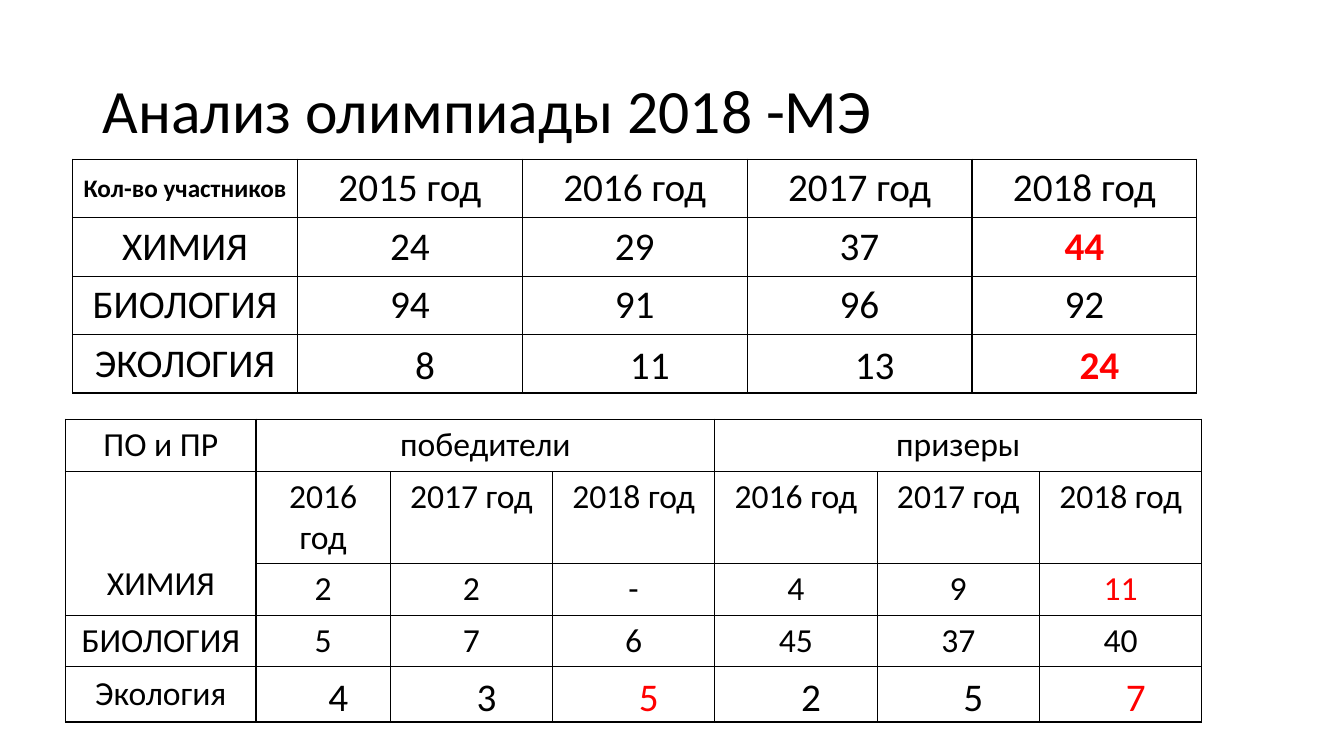
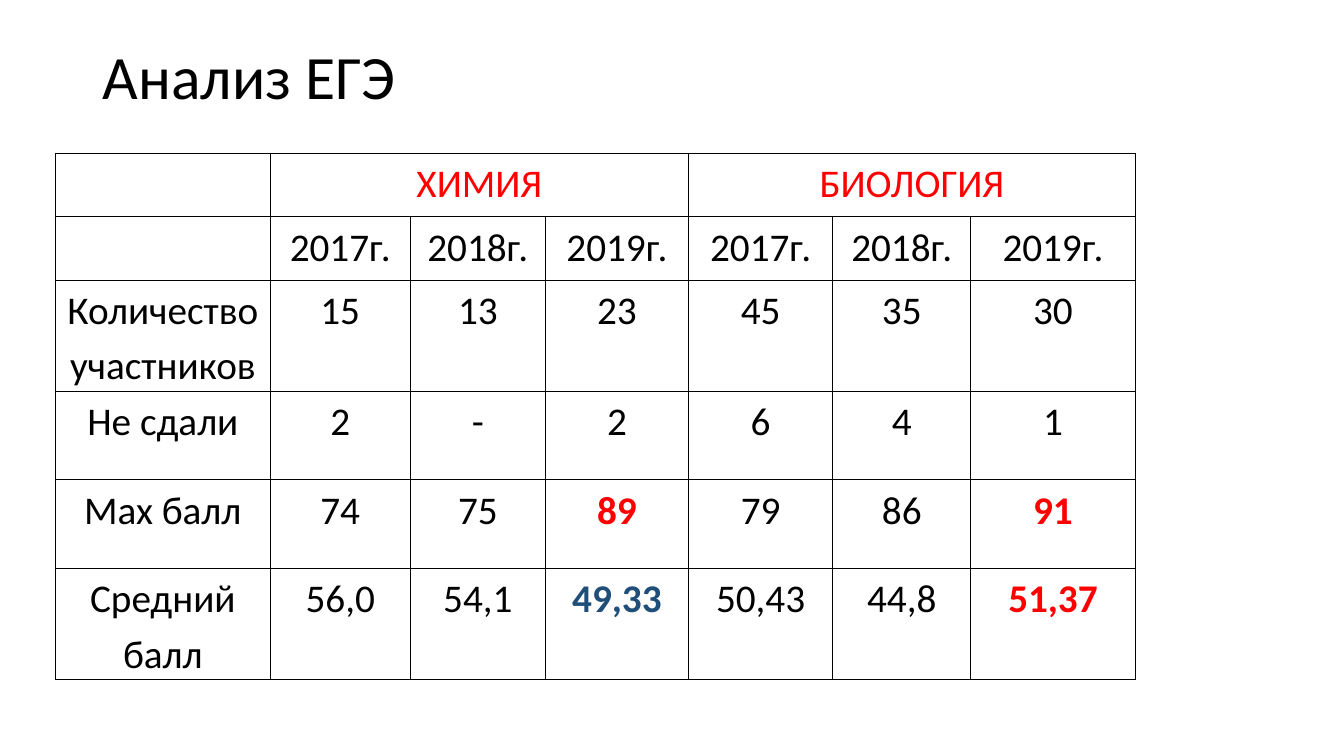
from lxml.etree import SubElement
from pptx import Presentation
from pptx.dml.color import RGBColor
from pptx.enum.text import MSO_ANCHOR, PP_ALIGN
from pptx.oxml.ns import qn
from pptx.util import Inches, Pt

LEFT, CENTER = PP_ALIGN.LEFT, PP_ALIGN.CENTER
TOP, MIDDLE, BOTTOM = MSO_ANCHOR.TOP, MSO_ANCHOR.MIDDLE, MSO_ANCHOR.BOTTOM

BLACK = RGBColor(0x00, 0x00, 0x00)
RED = RGBColor(0xFF, 0x00, 0x00)
BLUE = RGBColor(0x1F, 0x4E, 0x79)

FONT = "Calibri"
SIDES = ("lnL", "lnR", "lnT", "lnB")
TITLE = {"size": 44}
PLAIN = {"size": 28}
SMALL = {"size": 24}
LOOSE = {"margin_left": Inches(0.07), "margin_right": Inches(0.07),
         "margin_top": 0, "margin_bottom": 0}
ALERT = {"color": RED, "bold": True}

TALLY = [
    ["Кол-во участников", "2015 год", "2016 год", "2017 год", "2018 год"],
    ["ХИМИЯ", "24", "29", "37", "44"],
    ["БИОЛОГИЯ", "94", "91", "96", "92"],
    ["ЭКОЛОГИЯ", "8", "11", "13", "24"],
]
YEARS = ["2016 год", "2017 год", "2018 год"]
AWARDS = [
    ["ПО и ПР", "победители", "", "", "призеры", "", ""],
    ["ХИМИЯ", *YEARS * 2],
    ["", "2", "2", "-", "4", "9", "11"],
    ["БИОЛОГИЯ", "5", "7", "6", "45", "37", "40"],
    ["Экология", "4", "3", "5", "2", "5", "7"],
]
EXAM = [
    ["", "ХИМИЯ", "", "", "БИОЛОГИЯ", "", ""],
    ["", *["2017г.", "2018г.", "2019г."] * 2],
    ["Количество участников", "15", "13", "23", "45", "35", "30"],
    ["Не сдали", "2", "-", "2", "6", "4", "1"],
    ["Max балл", "74", "75", "89", "79", "86", "91"],
    ["Средний балл", "56,0", "54,1", "49,33", "50,43", "44,8", "51,37"],
]


def style(para, size, color=BLACK, bold=False, align=CENTER, space=None):
    para.alignment = align
    para.line_spacing = space
    look = {"name": FONT, "size": Pt(size), "bold": bold}
    for run in para.runs:
        for key, value in look.items():
            setattr(run.font, key, value)
        run.font.color.rgb = color


def add_slide(deck, text, height):
    """Add a slide whose title fills a band of the given height."""
    slide = deck.slides.add_slide(deck.slide_layouts[5])
    title = slide.shapes.title
    place = {"left": 0.92, "top": 0.4, "width": 11.5, "height": height}
    for key, value in place.items():
        setattr(title, key, Inches(value))
    title.text_frame.text = text
    title.text_frame.vertical_anchor = MIDDLE
    style(title.text_frame.paragraphs[0], **TITLE, align=LEFT, space=0.9)
    return slide


def add_edges(cell):
    props = cell._tc.get_or_add_tcPr()
    for spot, side in enumerate(SIDES):
        line = SubElement(props, qn(f"a:{side}"), w=str(Pt(1)))
        fill = SubElement(line, qn("a:solidFill"))
        SubElement(fill, qn("a:srgbClr"), val=str(BLACK))
        props.insert(spot, line)


def loosen(cell, indent=0):
    """Give a cell wide line spacing, no upper or lower margin, and an indent."""
    for key, value in LOOSE.items():
        setattr(cell, key, value)
    para = cell.text_frame.paragraphs[0]
    para.line_spacing = 1.15
    if indent:
        para._p.get_or_add_pPr().set("marL", str(Inches(indent)))


def add_grid(slide, at, cols, rows, data, base, marks):
    """Draw a ruled table; marks maps (row, column) to format values."""
    size = sum(cols), sum(rows)
    frame = slide.shapes.add_table(
        len(rows), len(cols), *map(Inches, (*at, *size)))
    grid = frame.table
    grid.first_row = grid.horz_banding = False
    for col, width in zip(grid.columns, cols):
        col.width = Inches(width)
    for row, height in zip(grid.rows, rows):
        row.height = Inches(height)
    for r, line in enumerate(data):
        for c, text in enumerate(line):
            cell = grid.cell(r, c)
            cell.text = text
            cell.fill.background()
            cell.vertical_anchor = TOP if c else MIDDLE
            add_edges(cell)
            style(cell.text_frame.paragraphs[0],
                  **{**base, **marks.get((r, c), {})})
    return grid


def merge(grid, first, last):
    grid.cell(*first).merge(grid.cell(*last))


def merge_heads(grid):
    """Join the two group headings, each over three years."""
    for col in (1, 4):
        merge(grid, (0, col), (0, col + 2))


def add_tally(slide):
    marks = {(0, 0): {"size": 18, "bold": True}, (1, 4): ALERT, (3, 4): ALERT}
    grid = add_grid(slide, (0.72, 1.58), [2.23] * 5, [0.58] * 4,
                    TALLY, PLAIN, marks)
    for col in range(1, 5):
        loosen(grid.cell(3, col), 0.3)


def add_awards(slide):
    marks = {(4, col): PLAIN for col in range(1, 7)}
    marks[2, 6] = {"color": RED}
    for col in (3, 6):
        marks[4, col] = {**PLAIN, "color": RED}
    grid = add_grid(slide, (0.65, 4.16), [1.89, 1.33, *[1.61] * 5],
                    [0.52, 0.91, 0.51, 0.51, 0.55], AWARDS, SMALL, marks)
    merge_heads(grid)
    merge(grid, (1, 0), (2, 0))
    label = grid.cell(1, 0)
    label.vertical_anchor = BOTTOM
    label.margin_bottom = Inches(0.11)
    for col in range(1, 7):
        loosen(grid.cell(4, col), 0.3)


def add_exam(slide):
    marks = {(0, 1): {"color": RED}, (0, 4): {"color": RED},
             (4, 3): ALERT, (4, 6): ALERT, (5, 6): ALERT,
             (5, 3): {"color": BLUE, "bold": True}}
    grid = add_grid(slide, (0.55, 1.52),
                    [2.13, 1.39, 1.34, 1.42, 1.43, 1.37, 1.63],
                    [0.63, 0.63, 1.1, 0.88, 0.88, 1.1], EXAM, PLAIN, marks)
    merge_heads(grid)
    for cell in grid.iter_cells():
        cell.vertical_anchor = TOP
        loosen(cell)


def main():
    deck = Presentation()
    deck.slide_width, deck.slide_height = Inches(13.33), Inches(7.5)
    slide = add_slide(deck, "Анализ олимпиады 2018 -МЭ", 1.45)
    add_awards(slide)
    add_tally(slide)
    add_exam(add_slide(deck, "Анализ ЕГЭ", 0.78))
    deck.save("out.pptx")


if __name__ == "__main__":
    main()
